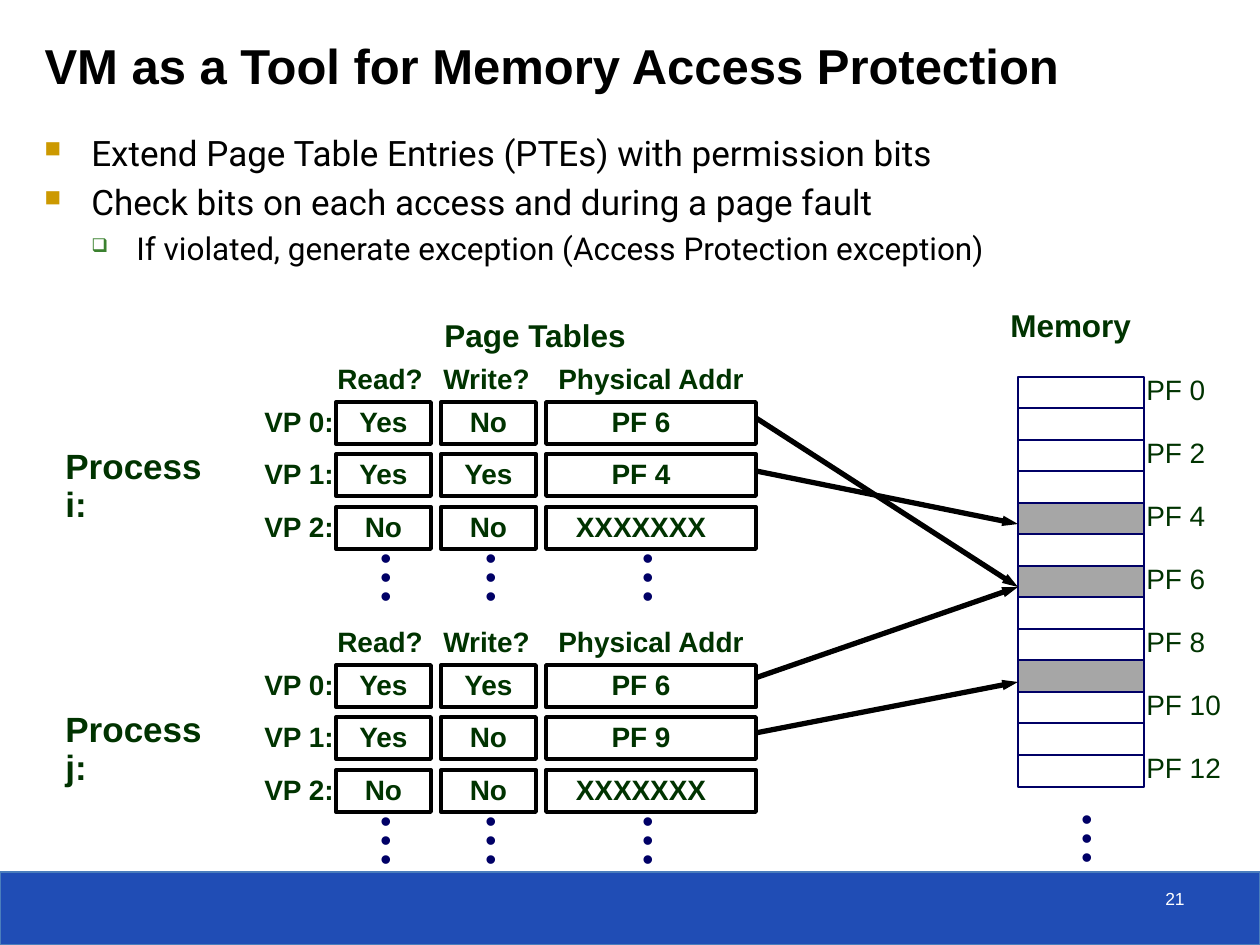
from typing import NamedTuple

from lxml import etree
from pptx import Presentation
from pptx.dml.color import RGBColor
from pptx.enum.shapes import MSO_CONNECTOR, MSO_SHAPE
from pptx.enum.text import MSO_ANCHOR, PP_ALIGN
from pptx.oxml.ns import qn
from pptx.util import Emu, Pt

RECTANGLE = MSO_SHAPE.RECTANGLE
STRAIGHT = MSO_CONNECTOR.STRAIGHT
LEFT, CENTER, RIGHT = PP_ALIGN.LEFT, PP_ALIGN.CENTER, PP_ALIGN.RIGHT
MIDDLE, BOTTOM = MSO_ANCHOR.MIDDLE, MSO_ANCHOR.BOTTOM
PX_PER_INCH = 126
BLACK, WHITE, GREEN, NAVY, GRAY = "000000", "FFFFFF", "003300", "000066", "A6A6A6"


class Box(NamedTuple):
    left: int
    top: int
    width: int
    height: int


class Column(NamedTuple):
    header: str
    header_left: int
    left: int
    width: int
    right_inset: int
    dots_left: int


class PageTable(NamedTuple):
    process: str
    top: int
    rows: list[tuple[str, str, str]]


class Arrow(NamedTuple):
    start: tuple[int, int]
    end: tuple[int, int]


class Bullet(NamedTuple):
    text: str
    level: int
    size: int
    symbol: str
    color: str
    symbol_size: int
    margin: int
    hanging: int


COLUMNS = [
    Column("Read?", 325, 336, 95, 0, 368),
    Column("Write?", 431, 441, 95, 0, 473),
    Column("Physical Addr", 546, 546, 210, 20, 630),
]
TABLE_I = PageTable("Process i:", 359, [
    ("Yes", "No", "PF 6"), ("Yes", "Yes", "PF 4"), ("No", "No", "XXXXXXX")])
TABLE_J = PageTable("Process j:", 622, [
    ("Yes", "Yes", "PF 6"), ("Yes", "No", "PF 9"), ("No", "No", "XXXXXXX")])
ARROWS = [
    Arrow((756, 471), (1018, 524)),
    Arrow((735, 685), (1018, 587)),
    Arrow((756, 418), (1018, 587)),
    Arrow((735, 737), (1018, 682)),
]
USED_FRAMES = {4, 6, 9}
FRAME_COUNT = 13
BULLETS = [
    Bullet("Extend Page Table Entries (PTEs) with permission bits",
           0, 20, "■", "CC9900", 65, 47, 47),
    Bullet("Check bits on each access and during a page fault",
           0, 20, "■", "CC9900", 65, 47, 47),
    Bullet("If violated, generate exception (Access Protection exception)",
           1, 18, "❑", "3B812F", 60, 92, 45),
]


def px(value: int) -> Emu:
    return Emu(round(value * 914400 / PX_PER_INCH))


def rgb(value: str) -> RGBColor:
    return RGBColor.from_string(value)


def format_paragraph(paragraph, size, color=GREEN, bold=False, font="Arial", **values):
    for name, value in {"name": font, "size": Pt(size), "bold": bold}.items():
        setattr(paragraph.font, name, value)
    paragraph.font.color.rgb = rgb(color)
    for name, value in values.items():
        setattr(paragraph, name, value)


def add_text(slide, box: Box, lines: list[str], size: int, **values):
    frame = slide.shapes.add_textbox(*map(px, box)).text_frame
    frame.word_wrap = True
    frame.text = "\n".join(lines)
    for paragraph in frame.paragraphs:
        format_paragraph(paragraph, size, **values)


def add_label(slide, box: Box, text: str, size: int, bold: bool = True):
    add_text(slide, box, [text], size, bold=bold, line_spacing=0.9)


def add_dots(slide, left: int, top: int):
    add_text(slide, Box(left, top, 34, 72), ["•"] * 3, 18, color=NAVY,
             alignment=CENTER, line_spacing=0.5)


def add_rectangle(slide, box: Box, fill: str, line: str, line_width: float):
    shape = slide.shapes.add_shape(RECTANGLE, *map(px, box))
    shape.shadow.inherit = False
    shape.fill.solid()
    shape.fill.fore_color.rgb = rgb(fill)
    shape.line.color.rgb = rgb(line)
    shape.line.width = Pt(line_width)
    return shape


def add_cell(slide, box: Box, text: str, right_inset: int):
    frame = add_rectangle(slide, box, WHITE, BLACK, 2.25).text_frame
    margins = {"margin_left": 0, "margin_top": 0, "margin_bottom": 0,
               "margin_right": px(right_inset), "vertical_anchor": MIDDLE}
    for name, value in margins.items():
        setattr(frame, name, value)
    frame.text = text
    format_paragraph(frame.paragraphs[0], 16, bold=True, alignment=CENTER, line_spacing=0.9)


def add_page_table(slide, table: PageTable):
    add_label(slide, Box(53, table.top + 84, 180, 90), table.process, 20)
    for column in COLUMNS:
        add_label(slide, Box(column.header_left, table.top, column.width + 20, 43),
                  column.header, 16)
        add_dots(slide, column.dots_left, table.top + 189)
    for index, row in enumerate(table.rows):
        top = table.top + 43 + index * 105 // 2
        add_label(slide, Box(252, top, 98, 43), f"VP {index}:", 16)
        for column, text in zip(COLUMNS, row):
            add_cell(slide, Box(column.left, top, column.width, 42), text, column.right_inset)


def add_memory(slide):
    add_label(slide, Box(998, 304, 150, 47), "Memory", 18)
    for index in range(FRAME_COUNT):
        top = 377 + index * 63 // 2
        fill = GRAY if index in USED_FRAMES else WHITE
        add_rectangle(slide, Box(1018, top, 126, 32), fill, NAVY, 1.5)
        if index % 2 == 0:
            add_label(slide, Box(1134, 370 + index * 63 // 2, 105, 43),
                      f"PF {index}", 16, bold=False)
    add_dots(slide, 1069, 809)


def add_arrow(slide, arrow: Arrow):
    connector = slide.shapes.add_connector(STRAIGHT, *map(px, arrow.start + arrow.end))
    connector.line.color.rgb = rgb(BLACK)
    connector.line.width = Pt(3)
    etree.SubElement(connector.line._get_or_add_ln(), qn("a:tailEnd"),
                     type="triangle", w="sm", len="med")
    etree.SubElement(connector._element.spPr, qn("a:effectLst"))


def add_bullets(slide, box: Box):
    frame = slide.shapes.add_textbox(*map(px, box)).text_frame
    frame.word_wrap = True
    frame.text = "\n".join(bullet.text for bullet in BULLETS)
    for index, (paragraph, bullet) in enumerate(zip(frame.paragraphs, BULLETS)):
        paragraph.level = bullet.level
        properties = paragraph._p.get_or_add_pPr()
        properties.set("marL", str(px(bullet.margin)))
        properties.set("indent", str(-px(bullet.hanging)))
        color = etree.SubElement(properties, qn("a:buClr"))
        etree.SubElement(color, qn("a:srgbClr"), val=bullet.color)
        etree.SubElement(properties, qn("a:buSzPct"), val=str(bullet.symbol_size * 1000))
        etree.SubElement(properties, qn("a:buChar"), char=bullet.symbol)
        format_paragraph(paragraph, bullet.size, BLACK, font="Roboto",
                         space_before=Pt(4 if index else 0))


def set_title(slide, box: Box, text: str):
    title = slide.shapes.title
    for name, value in zip(Box._fields, box):
        setattr(title, name, px(value))
    title.text_frame.text = text
    title.text_frame.vertical_anchor = BOTTOM
    format_paragraph(title.text_frame.paragraphs[0], 28, BLACK, bold=True, alignment=LEFT)


def main():
    presentation = Presentation()
    presentation.slide_width, presentation.slide_height = px(1260), px(945)
    slide = presentation.slides.add_slide(presentation.slide_layouts[5])

    # Footer bar, title and bullets
    add_rectangle(slide, Box(0, 872, 1260, 73), "204DB5", "4B7EBC", 0.75)
    set_title(slide, Box(32, -4, 1162, 105), "VM as a Tool for Memory Access Protection")
    add_bullets(slide, Box(32, 125, 1187, 179))

    # Page tables mapped to memory; the second table covers its arrow starts
    add_label(slide, Box(432, 314, 213, 47), "Page Tables", 18)
    add_page_table(slide, TABLE_I)
    add_memory(slide)
    for arrow in ARROWS:
        add_arrow(slide, arrow)
    add_page_table(slide, TABLE_J)

    # Slide number
    add_text(slide, Box(903, 882, 294, 42), ["21"], 10, color=WHITE, alignment=RIGHT)
    presentation.save("out.pptx")


if __name__ == "__main__":
    main()
